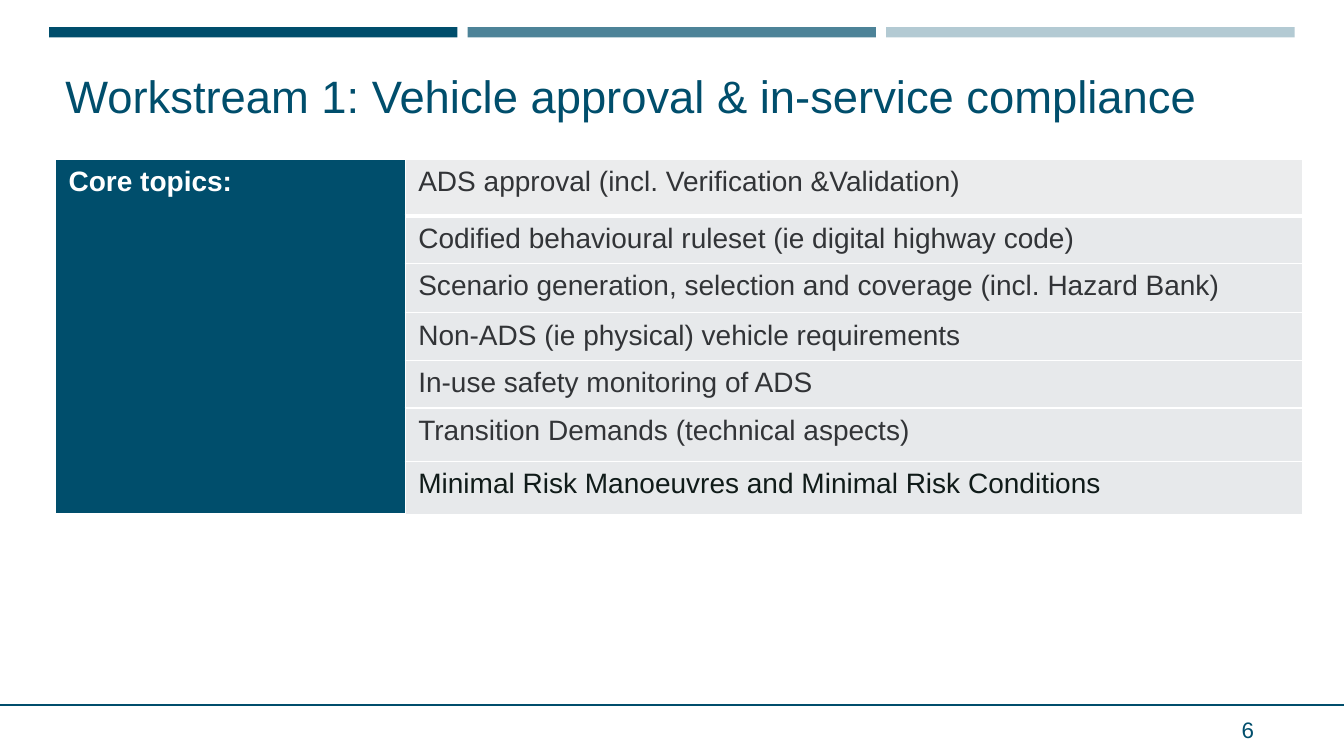
from lxml.etree import SubElement
from pptx import Presentation
from pptx.dml.color import RGBColor
from pptx.enum.shapes import MSO_CONNECTOR, MSO_SHAPE
from pptx.enum.text import MSO_ANCHOR
from pptx.oxml.ns import qn
from pptx.util import Pt

WIDTH, HEIGHT = 960, 540
TEAL, WHITE, GREY, DARK = "004E6C", "FFFFFF", "E7E9EB", "323437"
TOPICS = [
    ("ADS approval (incl. Verification &Validation)", 40.3, "EBECED", DARK),
    ("Codified behavioural ruleset (ie digital highway code)", 32.4, GREY, DARK),
    ("Scenario generation, selection and coverage (incl. Hazard Bank)", 35.3, GREY, DARK),
    ("Non-ADS (ie physical) vehicle requirements", 33.8, GREY, DARK),
    ("In-use safety monitoring of ADS", 33.8, GREY, DARK),
    ("Transition Demands (technical aspects)", 38.2, GREY, DARK),
    ("Minimal Risk Manoeuvres and Minimal Risk Conditions", 38.2, GREY, "101B19"),
]


def paint(fill, color):
    """Give a fill one solid colour."""
    fill.solid()
    fill.fore_color.rgb = RGBColor.from_string(color)


def write(frame, text, size, color, bold=False):
    """Set the text of a frame and format it."""
    frame.text = text
    frame.word_wrap = True
    paragraph = frame.paragraphs[0]
    font = paragraph.runs[0].font
    font.name, font.size, font.bold = "Arial", Pt(size), bold
    font.color.rgb = RGBColor.from_string(color)
    return paragraph


def add_text(slide, box, text, size, anchor):
    """Add a teal text box and return its paragraph."""
    frame = slide.shapes.add_textbox(*map(Pt, box)).text_frame
    frame.vertical_anchor = anchor
    return write(frame, text, size, TEAL)


def add_bars(slide, box):
    """Place three equal bars across the box."""
    left, top, width, height = box
    gap = 7.2
    bar_width = (width - 2 * gap) / 3
    for index, color in enumerate([TEAL, "4D8398", "B3CAD3"]):
        bar = slide.shapes.add_shape(
            MSO_SHAPE.RECTANGLE, Pt(left + index * (bar_width + gap)),
            Pt(top), Pt(bar_width), Pt(height))
        bar.shadow.inherit = False
        bar.line.fill.background()
        paint(bar.fill, color)


def style_cell(cell, text, fill, color, bold=False, bottom=1):
    """Write a cell and set its margins, white borders and fill."""
    cell.margin_left = cell.margin_right = Pt(9.4)
    cell.margin_top = cell.margin_bottom = Pt(5)
    write(cell.text_frame, text, 20, color, bold)
    properties = cell._tc.get_or_add_tcPr()
    for side, weight in zip("LRTB", (1, 1, 1, bottom)):
        edge = SubElement(properties, qn(f"a:ln{side}"), w=str(Pt(weight)))
        solid = SubElement(edge, qn("a:solidFill"))
        SubElement(solid, qn("a:srgbClr"), val=WHITE)
    paint(cell.fill, fill)


def add_topics(slide, box):
    """Place the core topics table in the box."""
    left, top, width, height = box
    heading_width = 249.8
    table = slide.shapes.add_table(len(TOPICS), 2, *map(Pt, box)).table
    table.columns[0].width = Pt(heading_width)
    table.columns[1].width = Pt(width - heading_width)
    for index, (topic, row_height, fill, color) in enumerate(TOPICS):
        table.rows[index].height = Pt(row_height)
        bottom = 3 if index == 0 else 1
        style_cell(table.cell(index, 1), topic, fill, color, bottom=bottom)
    heading = table.cell(0, 0)
    heading.merge(table.cell(len(TOPICS) - 1, 0))
    style_cell(heading, "Core topics:", TEAL, WHITE, True, 3)


def add_footer(slide, box):
    """Place the rule and the page number in the box."""
    left, top, width, height = box
    rule = slide.shapes.add_connector(
        MSO_CONNECTOR.STRAIGHT, Pt(left), Pt(top), Pt(left + width), Pt(top))
    rule.line.color.rgb = RGBColor.from_string(TEAL)
    rule.line.width = Pt(1.5)
    SubElement(rule._element.spPr, qn("a:effectLst"))
    number = add_text(slide, (left + width - 80.2, top + 3.6, 40.3, 28.8),
                      "6", 16, MSO_ANCHOR.MIDDLE)
    number.space_after = Pt(6)


def add_title(slide, box):
    """Place the slide title in the box."""
    title = add_text(slide, box,
                     "Workstream 1: Vehicle approval & in-service compliance",
                     32.4, MSO_ANCHOR.BOTTOM)
    title.line_spacing = 0.9


def main():
    """Build the slide and save it."""
    deck = Presentation()
    deck.slide_width, deck.slide_height = Pt(WIDTH), Pt(HEIGHT)
    slide = deck.slides.add_slide(deck.slide_layouts[6])
    add_footer(slide, (0, 503.3, WIDTH, 36.7))
    add_bars(slide, (35.1, 19.3, 889.6, 7.4))
    add_topics(slide, (39.6, 113.8, 890.6, sum(row[1] for row in TOPICS)))
    add_title(slide, (39.6, 36, 880.6, 55.4))
    deck.save("out.pptx")


if __name__ == "__main__":
    main()
